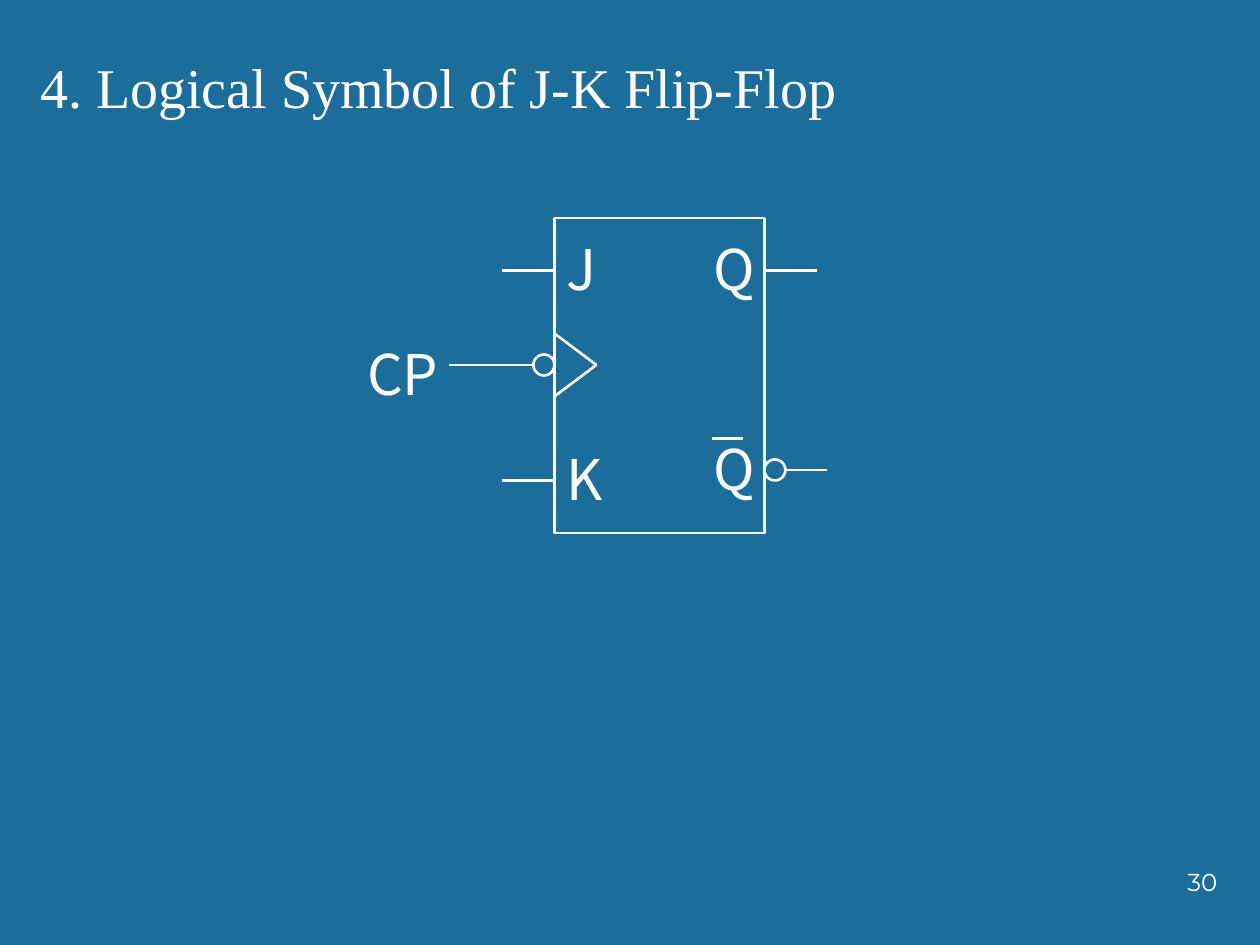
import pptx
import pptx.util
import pptx.dml.color
import pptx.enum.shapes
import pptx.enum.text
import pptx.oxml.ns
import lxml.etree

Inch = pptx.util.Inches
Kind = pptx.enum.shapes.MSO_SHAPE
Fit = pptx.enum.text.MSO_AUTO_SIZE
Anchor = pptx.enum.text.MSO_ANCHOR
Align = pptx.enum.text.PP_ALIGN

WHITE = pptx.dml.color.RGBColor(255, 255, 255)
BLUE = pptx.dml.color.RGBColor(0x1C, 0x6D, 0x9A)

WIDE, HIGH = 10, 7.5
LEFT, TOP = 4.4, 1.73
UNIT = 1 / 12

BODY = (Kind.RECTANGLE, 0, 0, 20, 30)
RINGS = [(Kind.OVAL, -2, 13, 2, 2), (Kind.OVAL, 20, 23, 2, 2)]
WIRES = [
    (0, 11, 4, 14),
    (0, 17, 4, 14),
    (20, 5, 25, 5),
    (22, 24, 26, 24),
    (-2, 14, -10, 14),
    (0, 5, -5, 5),
    (0, 25, -5, 25),
    (15, 21, 18, 21),
]
PINS = [
    ("J", 0, 1, 5, False),
    ("Q", 14, 1, 5, False),
    ("Q", 14, 20, 5, False),
    ("CP", -19, 11, 12, True),
    ("K", 0, 21, 5, False),
]
PIN_FONT = {"name": "Noto Sans CJK SC", "size": pptx.util.Pt(32)}
TITLE_FONT = {"name": "Times New Roman", "size": pptx.util.Pt(32)}
PAGE_FONT = {"name": "Montserrat", "size": pptx.util.Pt(14)}
GROW = {"auto_size": Fit.SHAPE_TO_FIT_TEXT}


def spot(col, row):
    return Inch(LEFT + col * UNIT), Inch(TOP + row * UNIT)


def span(*cells):
    return [Inch(cell * UNIT) for cell in cells]


def style(item, form):
    for key, value in form.items():
        setattr(item, key, value)


def pen(line):
    line.color.rgb = WHITE
    line.width = pptx.util.Pt(1.5)


def draw(group, kind, col, row, wide, high):
    shape = group.shapes.add_shape(kind, *spot(col, row), *span(wide, high))
    shape.shadow.inherit = False
    shape.fill.background()
    pen(shape.line)


def wire(group, col, row, to_col, to_row):
    line = group.shapes.add_connector(
        pptx.enum.shapes.MSO_CONNECTOR.STRAIGHT,
        *spot(col, row), *spot(to_col, to_row))
    pen(line.line)
    lxml.etree.SubElement(
        line._element.spPr, pptx.oxml.ns.qn("a:effectLst"))


def write(place, text, area, font, frame, align=Align.LEFT):
    box = place.shapes.add_textbox(*area).text_frame
    style(box, frame)
    para = box.paragraphs[0]
    para.alignment = align
    run = para.add_run()
    run.text = text
    style(run.font, font)
    run.font.color.rgb = WHITE


def main():
    deck = pptx.Presentation()
    deck.slide_width, deck.slide_height = Inch(WIDE), Inch(HIGH)
    slide = deck.slides.add_slide(deck.slide_layouts[6])
    slide.background.fill.solid()
    slide.background.fill.fore_color.rgb = BLUE

    group = slide.shapes.add_group_shape()
    draw(group, *BODY)
    for ends in WIRES:
        wire(group, *ends)
    for text, col, row, wide, wrap in PINS:
        area = (*spot(col, row), *span(wide, 7.5))
        write(group, text, area, PIN_FONT, {"word_wrap": wrap, **GROW})
    for ring in RINGS:
        draw(group, *ring)

    page = map(Inch, (7.68, 6.83, 2.08, 0.5))
    write(slide, "30", page, PAGE_FONT, {"word_wrap": True}, Align.RIGHT)
    title = map(Inch, (0.22, 0.36, 9.58, 0.64))
    write(slide, "4. Logical Symbol of J-K Flip-Flop", title, TITLE_FONT,
          {"word_wrap": True, "vertical_anchor": Anchor.BOTTOM, **GROW})
    deck.save("out.pptx")


if __name__ == "__main__":
    main()
